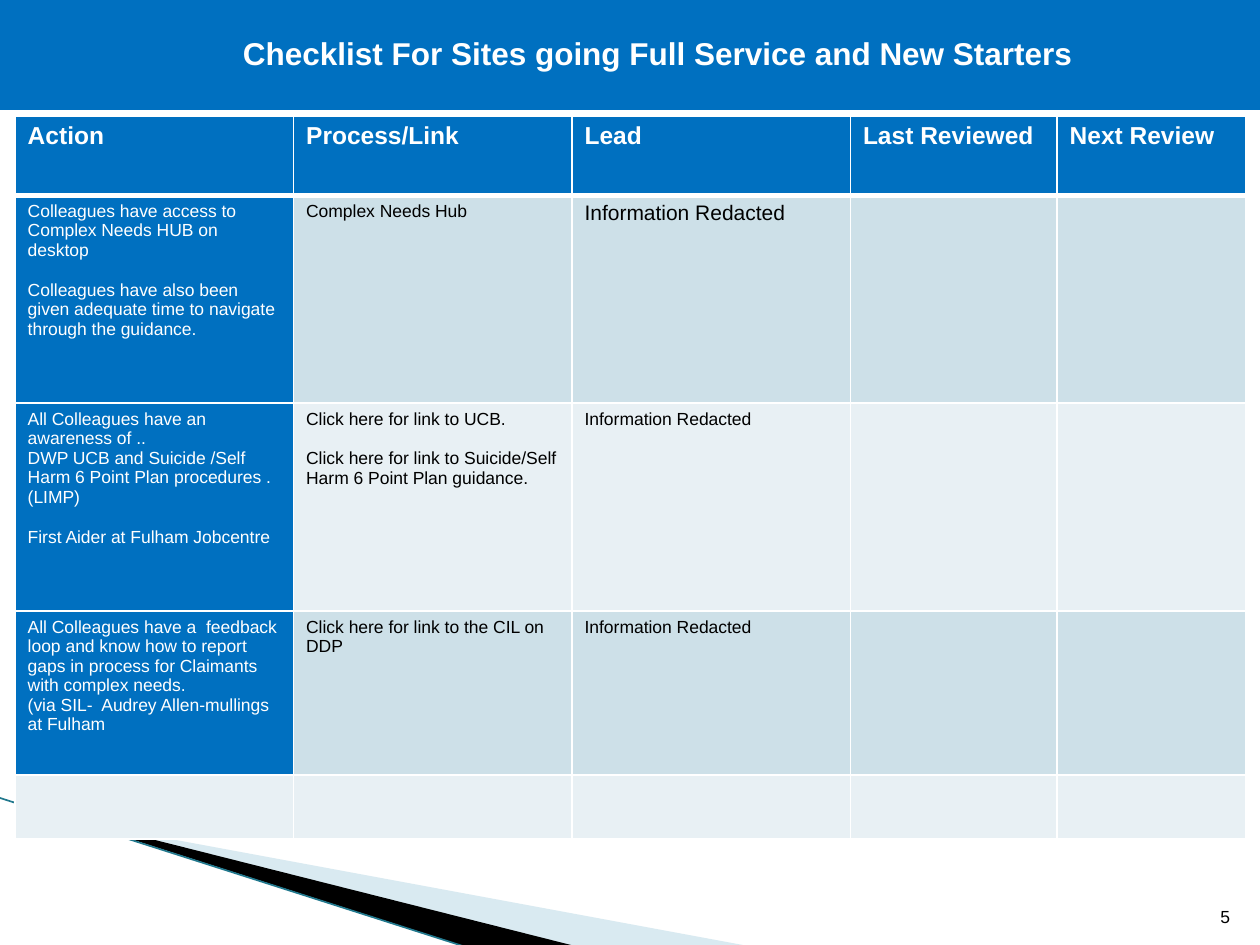
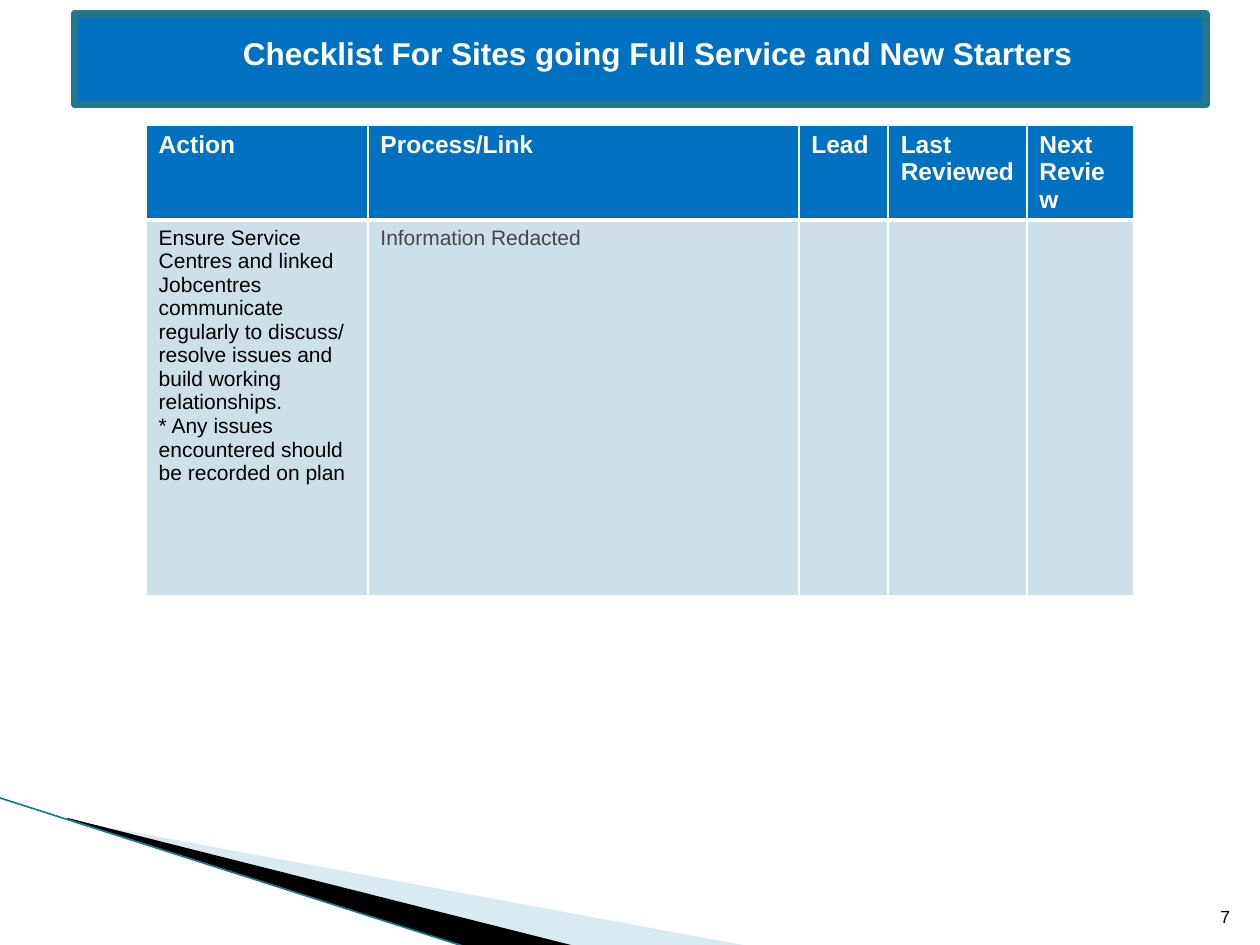
from dataclasses import dataclass

import pptx
import pptx.dml.color
import pptx.enum.shapes
import pptx.enum.text
import pptx.oxml
import pptx.oxml.ns
import pptx.util
from pptx.dml.color import RGBColor
from pptx.util import Inches

WHITE = RGBColor(0xFF, 0xFF, 0xFF)
BLACK = RGBColor(0x00, 0x00, 0x00)
GREY = RGBColor(0x46, 0x46, 0x46)
BLUE = RGBColor(0x00, 0x70, 0xC0)
TEAL = RGBColor(0x21, 0x78, 0x8D)
SWOOSH = RGBColor(0xA0, 0xCB, 0xDC)
BAND_DARK = RGBColor(0xCD, 0xE0, 0xE8)
BAND_LIGHT = RGBColor(0xE8, 0xF0, 0xF4)

FONT = "Arial"
TITLE = "Checklist For Sites going Full Service and New Starters"
HEADINGS = ("Action", "Process/Link", "Lead", "Last Reviewed", "Next Review")
REDACTED = "Information Redacted"


@dataclass(frozen=True)
class Para:
    text: str
    gap_before: bool = False


@dataclass(frozen=True)
class Cell:
    paras: tuple[Para, ...] = ()
    size: float = 10
    color: RGBColor = BLACK
    fill: RGBColor | None = None  # None takes the band of the row
    bold: bool = False


@dataclass(frozen=True)
class Box:
    left: float
    top: float
    width: float
    height: float

    def lengths(self) -> tuple:
        return tuple(map(Inches, (self.left, self.top, self.width, self.height)))


@dataclass(frozen=True)
class Checklist:
    number: int
    banner: Box
    banner_line: RGBColor
    place: Box
    columns: tuple[float, ...]
    row_heights: tuple[float, ...]
    rows: tuple[tuple[Cell, ...], ...]


def action(*paras: Para) -> Cell:
    return Cell(paras, color=WHITE, fill=BLUE)


def note(*paras: Para, size: float = 10, color: RGBColor = BLACK) -> Cell:
    return Cell(paras, size=size, color=color)


CHECKLISTS = (
    Checklist(
        5, Box(0, 0, 10, 0.84), BLUE, Box(0.12, 0.92, 9.76, 5.74),
        (2.21, 2.21, 2.21, 1.64, 1.5), (0.63, 1.65, 1.65, 1.3, 0.51),
        (
            (
                action(
                    Para("Colleagues have access to Complex Needs HUB on desktop"),
                    Para("Colleagues have also been given adequate time to navigate "
                         "through the guidance.", gap_before=True),
                ),
                note(Para("Complex Needs Hub")),
                note(Para(REDACTED), size=12),
            ),
            (
                action(
                    Para("All Colleagues have an awareness of .."),
                    Para("DWP UCB and Suicide /Self Harm 6 Point Plan procedures . (LIMP)"),
                    Para("First Aider at Fulham Jobcentre", gap_before=True),
                ),
                note(
                    Para("Click here for link to UCB."),
                    Para("Click here for link to Suicide/Self Harm 6 Point Plan guidance.",
                         gap_before=True),
                ),
                note(Para(REDACTED)),
            ),
            (
                action(
                    Para("All Colleagues have a  feedback loop and know how to report "
                         "gaps in process for Claimants with complex needs."),
                    Para("(via SIL-  Audrey Allen-mullings at Fulham"),
                ),
                note(Para("Click here for link to the CIL on DDP")),
                note(Para(REDACTED)),
            ),
            (),
        ),
    ),
    Checklist(
        7, Box(0.59, 0.11, 8.98, 0.72), TEAL, Box(1.16, 0.99, 7.84, 3.47),
        (1.76, 3.42, 0.71, 1.1, 0.85), (0.49, 2.98),
        (
            (
                note(
                    Para("Ensure Service Centres and linked Jobcentres communicate "
                         "regularly to discuss/ resolve issues and build working "
                         "relationships."),
                    Para("* Any issues encountered should be recorded on plan"),
                    size=12,
                ),
                note(Para(REDACTED), size=12, color=GREY),
            ),
        ),
    ),
)


def style_font(font, size: float, color: RGBColor, bold: bool = False) -> None:
    font.name = FONT
    font.size = pptx.util.Pt(size)
    font.bold = bold
    font.color.rgb = color


def add_swoosh(slide, points: list[tuple[float, float]], color: RGBColor,
               opacity: int = 100) -> None:
    start, *others = [(Inches(x), Inches(y)) for x, y in points]
    builder = slide.shapes.build_freeform(*start)
    builder.add_line_segments(others)
    swoosh = builder.convert_to_shape()
    swoosh.shadow.inherit = False
    swoosh.fill.solid()
    swoosh.fill.fore_color.rgb = color
    swoosh.line.fill.background()
    if opacity < 100:
        rgb = swoosh.fill._xPr.find(".//" + pptx.oxml.ns.qn("a:srgbClr"))
        rgb.append(pptx.oxml.parse_xml(
            f'<a:alpha {pptx.oxml.ns.nsdecls("a")} val="{opacity * 1000}"/>'))


def add_corner(slide) -> None:
    """Draw the swooshes at the lower left."""
    add_swoosh(slide, [(0.55, 6.51), (5.95, 7.51), (4.56, 7.51), (0.55, 6.5)], SWOOSH, 40)
    add_swoosh(slide, [(0.53, 6.49), (4.57, 7.51), (3.72, 7.52), (0.54, 6.5)], BLACK)
    edge = slide.shapes.add_connector(
        pptx.enum.shapes.MSO_CONNECTOR.STRAIGHT,
        Inches(-0.01), Inches(6.33), Inches(3.71), Inches(7.52))
    edge.line.color.rgb = TEAL
    edge.line.width = pptx.util.Pt(0.95)
    edge._element.spPr.append(
        pptx.oxml.parse_xml(f'<a:effectLst {pptx.oxml.ns.nsdecls("a")}/>'))


def set_borders(cell, bottom: float) -> None:
    properties = cell._tc.get_or_add_tcPr()
    widths = {"lnL": 1, "lnR": 1, "lnT": 1, "lnB": bottom}
    for position, (side, width) in enumerate(widths.items()):
        properties.insert(position, pptx.oxml.parse_xml(
            f'<a:{side} {pptx.oxml.ns.nsdecls("a")} w="{pptx.util.Pt(width)}">'
            f'<a:solidFill><a:srgbClr val="{WHITE}"/></a:solidFill></a:{side}>'))


def fill_cell(cell, content: Cell, band: RGBColor, bottom: float) -> None:
    cell.fill.solid()
    cell.fill.fore_color.rgb = content.fill or band
    set_borders(cell, bottom)
    for index, para in enumerate(content.paras):
        frame = cell.text_frame
        paragraph = frame.add_paragraph() if index else frame.paragraphs[0]
        paragraph.text = para.text
        style_font(paragraph.font, content.size, content.color, content.bold)
        if para.gap_before:
            paragraph.space_before = pptx.util.Pt(content.size * 1.15)


def add_checklist_table(slide, checklist: Checklist) -> None:
    header = tuple(Cell((Para(heading),), 14, WHITE, BLUE, True) for heading in HEADINGS)
    rows = (header, *checklist.rows)
    table = slide.shapes.add_table(
        len(rows), len(HEADINGS), *checklist.place.lengths()).table
    table.horz_banding = False
    for column, width in zip(table.columns, checklist.columns):
        column.width = Inches(width)
    for row_index, (contents, height) in enumerate(zip(rows, checklist.row_heights)):
        table.rows[row_index].height = Inches(height)
        band = BAND_DARK if row_index % 2 else BAND_LIGHT
        for column_index in range(len(HEADINGS)):
            content = contents[column_index] if column_index < len(contents) else Cell()
            fill_cell(table.cell(row_index, column_index), content, band,
                      bottom=1 if row_index else 3)


def add_label(slide, box: Box, text: str, size: float, color: RGBColor,
              bold: bool = False):
    label = slide.shapes.add_textbox(*box.lengths())
    label.text_frame.word_wrap = True
    paragraph = label.text_frame.paragraphs[0]
    paragraph.text = text
    style_font(paragraph.font, size, color, bold)
    return label.text_frame


def add_page_number(slide, number: int) -> None:
    frame = add_label(slide, Box(9.46, 7.01, 0.4, 0.4), str(number), 10, BLACK)
    frame.vertical_anchor = pptx.enum.text.MSO_ANCHOR.BOTTOM
    frame.paragraphs[0].alignment = pptx.enum.text.PP_ALIGN.RIGHT


def add_banner(slide, box: Box, line_color: RGBColor) -> None:
    banner = slide.shapes.add_shape(
        pptx.enum.shapes.MSO_SHAPE.RECTANGLE, *box.lengths())
    banner.shadow.inherit = False
    banner.fill.solid()
    banner.fill.fore_color.rgb = BLUE
    banner.line.color.rgb = line_color
    banner.line.width = pptx.util.Pt(4.33)
    banner.line._ln.append(
        pptx.oxml.parse_xml(f'<a:round {pptx.oxml.ns.nsdecls("a")}/>'))
    title = add_label(slide, Box(1.83, 0.22, 8.19, 0.4), TITLE, 18, WHITE, bold=True)
    title.auto_size = pptx.enum.text.MSO_AUTO_SIZE.SHAPE_TO_FIT_TEXT


def main() -> None:
    deck = pptx.Presentation()
    deck.slide_width, deck.slide_height = Inches(10), Inches(7.5)
    for checklist in CHECKLISTS:
        slide = deck.slides.add_slide(deck.slide_layouts[6])
        add_corner(slide)
        add_checklist_table(slide, checklist)
        add_page_number(slide, checklist.number)
        add_banner(slide, checklist.banner, checklist.banner_line)
    deck.save("out.pptx")


if __name__ == "__main__":
    main()
